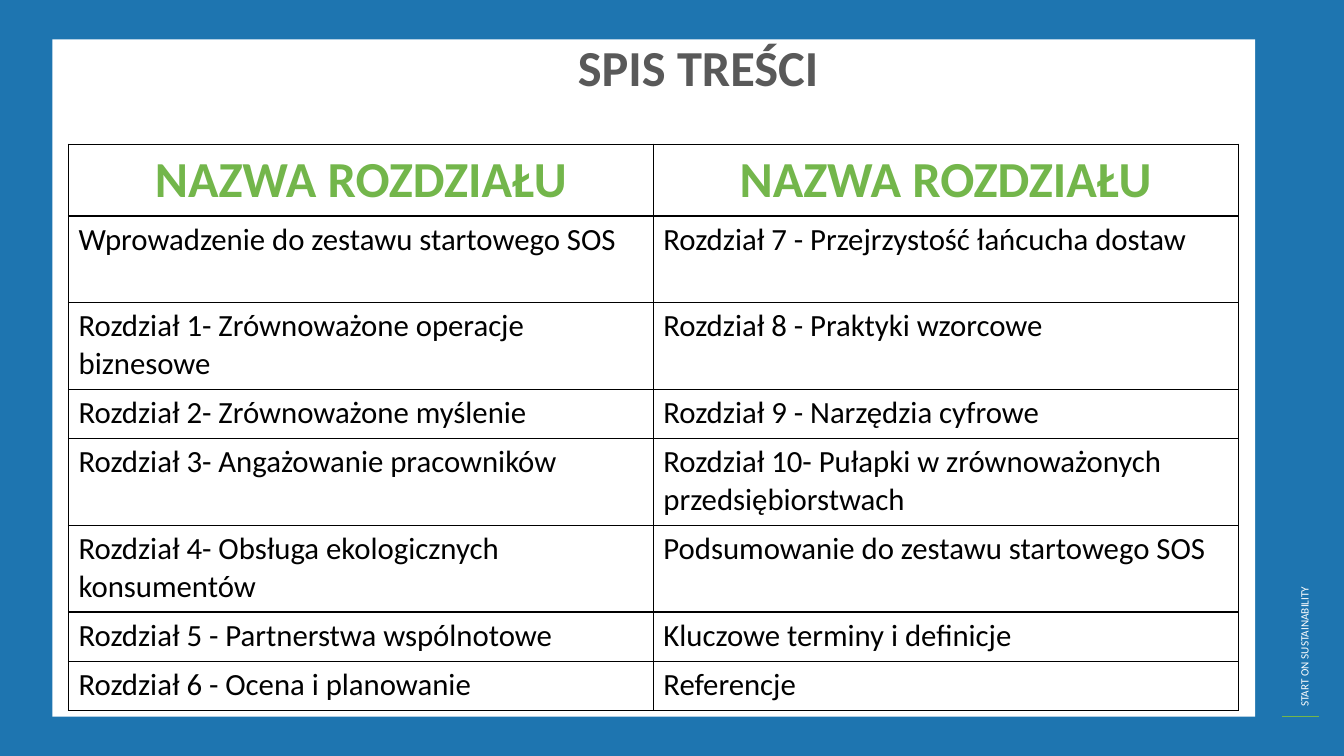
from dataclasses import dataclass

from lxml import etree
from pptx import Presentation
from pptx.dml.color import RGBColor
from pptx.enum.shapes import MSO_CONNECTOR, MSO_SHAPE
from pptx.enum.text import MSO_ANCHOR, MSO_AUTO_SIZE, PP_ALIGN
from pptx.oxml.ns import qn
from pptx.util import Inches, Pt

RECTANGLE = MSO_SHAPE.RECTANGLE
STRAIGHT = MSO_CONNECTOR.STRAIGHT
TOP = MSO_ANCHOR.TOP
NO_AUTOFIT = MSO_AUTO_SIZE.NONE
LEFT, CENTER = PP_ALIGN.LEFT, PP_ALIGN.CENTER
TITLE_ONLY = 5


@dataclass(frozen=True)
class Theme:
    """Colours, font and type sizes of the slide."""
    blue: str = "1E75B0"
    green: str = "73B64B"
    grey: str = "595959"
    white: str = "FFFFFF"
    ink: str = "010101"
    border: str = "000000"
    font: str = "Calibri"
    heading: int = 36
    entry: int = 22
    tag: int = 8


THEME = Theme()
SLIDE_SIZE = (13.33, 7.5)
PANEL_BOX = (0.52, 0.39, 11.93, 6.72)
TITLE_BOX = (1.33, 0.38, 10.94, 0.88)
TABLE_BOX = (0.68, 1.43, 11.6, 5.62)
SIDE_BOX = (12.72, 2.65, 0.36, 4.46)

HEADER_HEIGHT, TALL, SHORT = 0.71, 0.86, 0.49
HEADER = "NAZWA ROZDZIAŁU"
CHAPTERS = [
    (TALL, "Wprowadzenie do zestawu startowego SOS",
     "Rozdział 7 - Przejrzystość łańcucha dostaw"),
    (TALL, "Rozdział 1- Zrównoważone operacje biznesowe",
     "Rozdział 8 - Praktyki wzorcowe"),
    (SHORT, "Rozdział 2- Zrównoważone myślenie",
     "Rozdział 9 - Narzędzia cyfrowe"),
    (TALL, "Rozdział 3- Angażowanie pracowników",
     "Rozdział 10- Pułapki w zrównoważonych przedsiębiorstwach"),
    (TALL, "Rozdział 4- Obsługa ekologicznych konsumentów",
     "Podsumowanie do zestawu startowego SOS"),
    (SHORT, "Rozdział 5 - Partnerstwa wspólnotowe",
     "Kluczowe terminy i definicje"),
    (SHORT, "Rozdział 6 - Ocena i planowanie", "Referencje"),
]


def apply_format(target, values):
    """Set every attribute in the dict on the target."""
    for name, value in values.items():
        setattr(target, name, value)


def write_text(text_frame, text, size, color, bold=False, align=LEFT):
    """Write one formatted paragraph and return it."""
    paragraph = text_frame.paragraphs[0]
    paragraph.alignment = align
    run = paragraph.add_run()
    run.text = text
    apply_format(run.font, {"name": THEME.font, "size": Pt(size), "bold": bold})
    run.font.color.rgb = RGBColor.from_string(color)
    return paragraph


def add_panel(slide, box):
    """Fill the slide with blue and lay the white panel on it."""
    background = slide.background.fill
    background.solid()
    background.fore_color.rgb = RGBColor.from_string(THEME.blue)
    panel = slide.shapes.add_shape(RECTANGLE, *map(Inches, box))
    panel.shadow.inherit = False
    panel.fill.solid()
    panel.fill.fore_color.rgb = RGBColor.from_string(THEME.white)
    panel.line.fill.background()


def add_title(slide, box):
    """Place the title placeholder in front of the panel."""
    title = slide.shapes.title
    slide.shapes._spTree.append(title._element)
    apply_format(title, dict(zip(("left", "top", "width", "height"), map(Inches, box))))
    apply_format(title.text_frame, {"vertical_anchor": TOP, "word_wrap": True,
                                    "auto_size": NO_AUTOFIT})
    paragraph = write_text(title.text_frame, "SPIS TREŚCI", THEME.heading,
                           THEME.grey, True, CENTER)
    paragraph.line_spacing = 0.9
    properties = paragraph._p.get_or_add_pPr()
    properties.set("marL", str(Inches(0.5)))
    properties.set("indent", str(Inches(-0.25)))


def add_side_tag(slide, box):
    """Run the vertical tag up the side and underline it in green."""
    left, top, width, height = box
    thickness = 0.24
    tag = slide.shapes.add_textbox(
        Inches(left + (width - height) / 2 + 0.04),
        Inches(top + (height - thickness) / 2),
        Inches(height), Inches(thickness))
    tag.rotation = 270
    tag.text_frame.word_wrap = True
    write_text(tag.text_frame, "START ON SUSTAINABILITY", THEME.tag, THEME.white)
    bottom = Inches(top + height)
    rule = slide.shapes.add_connector(STRAIGHT, Inches(left), bottom,
                                      Inches(left + width), bottom)
    rule.line.color.rgb = RGBColor.from_string(THEME.green)
    rule.line.width = Pt(1)
    etree.SubElement(rule._element.spPr, qn("a:effectLst"))


def add_borders(cell):
    """Draw a thin line on all four sides of a cell."""
    properties = cell._tc.get_or_add_tcPr()
    for side in ("a:lnL", "a:lnR", "a:lnT", "a:lnB"):
        line = etree.SubElement(properties, qn(side), w=str(Pt(1)))
        fill = etree.SubElement(line, qn("a:solidFill"))
        etree.SubElement(fill, qn("a:srgbClr"), val=THEME.border)


def add_contents_table(slide, box):
    """Build the two-column table of chapters."""
    rows = [(HEADER_HEIGHT, HEADER, HEADER), *CHAPTERS]
    table = slide.shapes.add_table(len(rows), 2, *map(Inches, box)).table
    apply_format(table, {"first_row": False, "horz_banding": False})
    for row, (height, *texts) in zip(table.rows, rows):
        row.height = Inches(height)
        for cell, text in zip(row.cells, texts):
            add_borders(cell)
            cell.fill.background()
            if text == HEADER:
                write_text(cell.text_frame, text, THEME.heading, THEME.green, True, CENTER)
            else:
                write_text(cell.text_frame, text, THEME.entry, THEME.ink)


def main():
    """Build the contents slide and save it."""
    presentation = Presentation()
    width, height = map(Inches, SLIDE_SIZE)
    apply_format(presentation, {"slide_width": width, "slide_height": height})
    slide = presentation.slides.add_slide(presentation.slide_layouts[TITLE_ONLY])
    add_panel(slide, PANEL_BOX)
    add_side_tag(slide, SIDE_BOX)
    add_title(slide, TITLE_BOX)
    add_contents_table(slide, TABLE_BOX)
    presentation.save("out.pptx")


if __name__ == "__main__":
    main()
